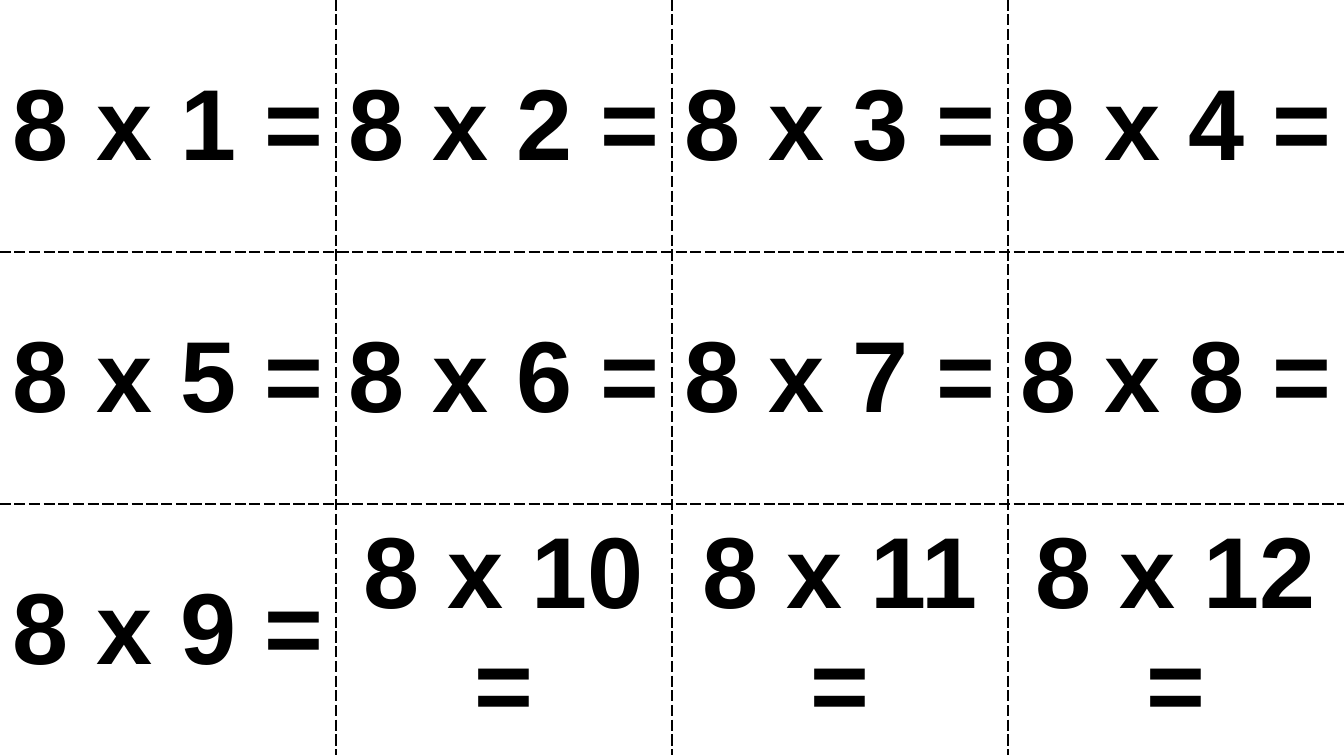
"""Build a sheet of twelve cut-out cards for the eight times table."""
from lxml import etree
from pptx import Presentation
from pptx import util as u
from pptx.dml.color import RGBColor
from pptx.enum import text
from pptx.oxml.ns import qn

THEME = {"ink": "000000", "paper": "FFFFFF", "font": "Arial", "size": 72, "line": 1}
PX = 914400 / 100.8
COLUMNS, ROWS = 4, 3
CARD_WIDTH, CARD_HEIGHT = 336, 252
FACTOR = 8


def px(length):
    return u.Emu(round(length * PX))


def add_border(card, side, position, is_cut):
    line = etree.Element(qn(f"a:ln{side}"), w=str(u.Pt(THEME["line"])))
    fill = etree.SubElement(line, qn("a:solidFill"))
    color = THEME["ink"] if is_cut else THEME["paper"]
    etree.SubElement(fill, qn("a:srgbClr"), val=color)
    etree.SubElement(line, qn("a:prstDash"), val="dash" if is_cut else "solid")
    card._tc.get_or_add_tcPr().insert(position, line)


deck = Presentation()
deck.slide_width = px(COLUMNS * CARD_WIDTH)
deck.slide_height = px(ROWS * CARD_HEIGHT)
slide = deck.slides.add_slide(deck.slide_layouts[6])

cards = slide.shapes.add_table(
    ROWS, COLUMNS, 0, 0, deck.slide_width, deck.slide_height
).table
cards.first_row = cards.horz_banding = False
for column in cards.columns:
    column.width = px(CARD_WIDTH)
for row in cards.rows:
    row.height = px(CARD_HEIGHT)

question_format = {"name": THEME["font"], "size": u.Pt(THEME["size"]), "bold": True}
for index, card in enumerate(cards.iter_cells()):
    row_index, column_index = divmod(index, COLUMNS)
    card.fill.solid()
    card.fill.fore_color.rgb = RGBColor.from_string(THEME["paper"])
    card.vertical_anchor = text.MSO_ANCHOR.MIDDLE

    question = card.text_frame.paragraphs[0]
    question.text = f"{FACTOR} x {index + 1} ="
    question.alignment = text.PP_ALIGN.CENTER
    font = question.runs[0].font
    for attribute, value in question_format.items():
        setattr(font, attribute, value)
    font.color.rgb = RGBColor.from_string(THEME["ink"])

    cuts = {
        "L": column_index > 0,
        "R": column_index < COLUMNS - 1,
        "T": row_index > 0,
        "B": row_index < ROWS - 1,
    }
    for position, (side, is_cut) in enumerate(cuts.items()):
        add_border(card, side, position, is_cut)

deck.save("out.pptx")
